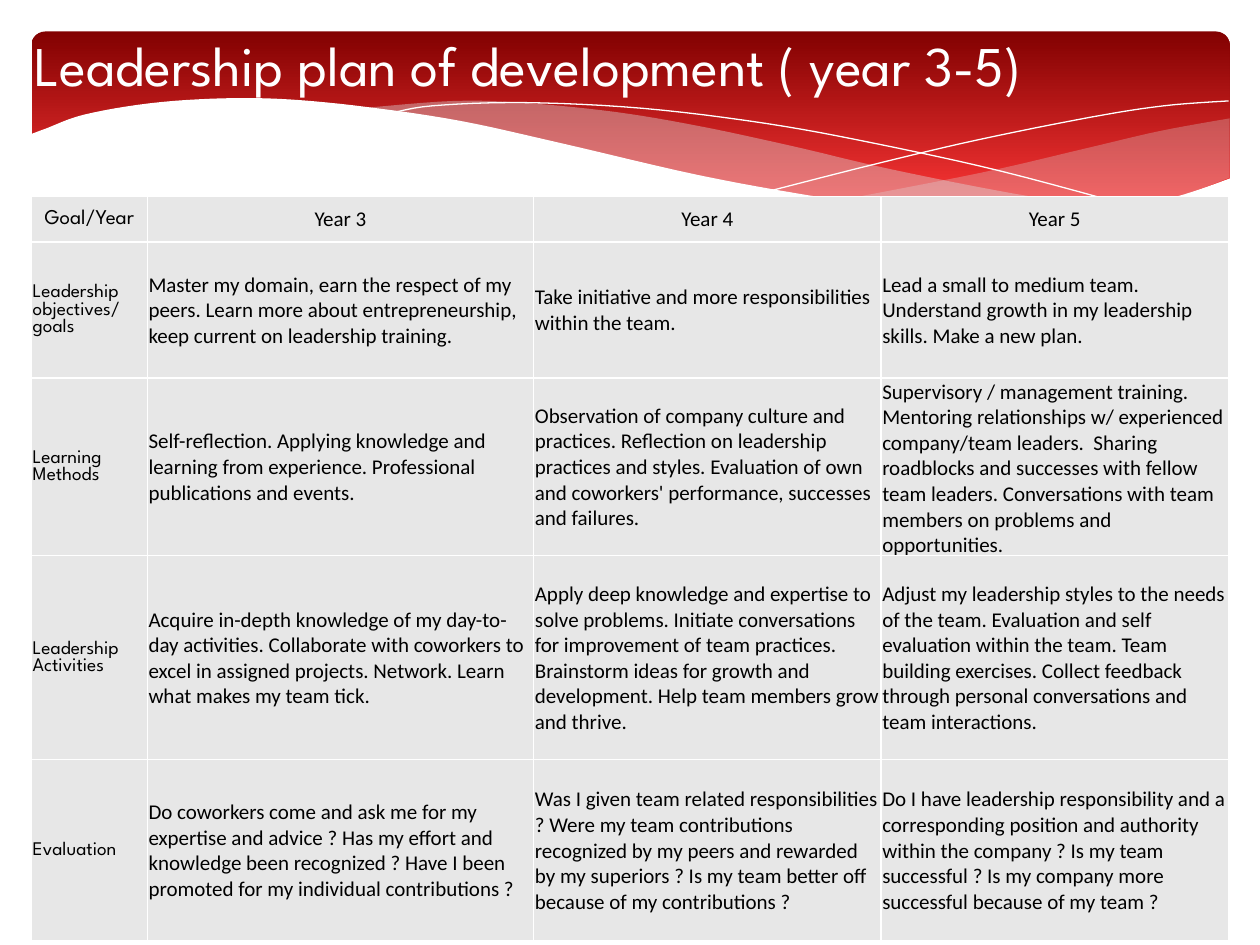
from lxml import etree
from pptx import Presentation
from pptx.dml.color import RGBColor
from pptx.enum.shapes import MSO_SHAPE
from pptx.enum.text import MSO_ANCHOR, MSO_AUTO_SIZE, PP_ALIGN
from pptx.oxml.ns import qn
from pptx.util import Inches, Pt

ROUND = MSO_SHAPE.ROUNDED_RECTANGLE
MIDDLE = MSO_ANCHOR.MIDDLE
GROW = MSO_AUTO_SIZE.SHAPE_TO_FIT_TEXT
LEFT, CENTER = PP_ALIGN.LEFT, PP_ALIGN.CENTER

WHITE = RGBColor(0xFF, 0xFF, 0xFF)
BLACK = RGBColor(0, 0, 0)
DARK = RGBColor(0x82, 0x01, 0x01)
RED = RGBColor(0xFE, 0x37, 0x37)
MIST = RGBColor(0xDE, 0xDE, 0xE0)
GREY = RGBColor(0xE7, 0xE7, 0xE7)
HEAD, BODY = "League Spartan", "Calibri"

# Curves of the band, as percent of its width and height
RIGHT = [
    [(100, 44.2), (94.2, 50.6), (87.9, 59.6), (79.3, 71.8), (66.9, 86.5)],
    [(66.9, 86.5), (73, 91), (79.5, 94.2), (86.1, 93.6), (91.7, 89.7),
     (95.7, 84), (100, 74.4)],
]
MID = [
    [(91.3, 91), (82.2, 82.7), (71.6, 69.9), (63.5, 58.3), (55.7, 48.1),
     (48.8, 41), (41.5, 36.5), (35.3, 35.3), (27.4, 39.1)],
    [(27.4, 39.1), (33.3, 44.2), (39.9, 51.9), (49, 64.7), (56.9, 75.6),
     (65.7, 85.3), (73.3, 91.7), (81.1, 94.9), (86.5, 94.2), (91.3, 91)],
]
FALL = [[(29.9, 41.7), (33.5, 37.8), (41.1, 36.2), (51, 39.1), (61.3, 46.8),
         (70.5, 57.1), (81, 71.2), (92.7, 90.4)]]
RISE = [[(61.8, 80.8), (70.5, 67.3), (79, 55.1), (88.4, 43.6), (94.5, 37.8),
         (99.9, 35.3)]]
FRONT = [
    [(100.2, 74.4), (95.2, 84.6), (89.4, 91), (82.4, 93.6), (73.7, 91),
     (65.5, 84), (55.7, 73.1), (44.4, 57.1), (35.8, 45.5), (28.1, 38.5),
     (21.6, 34.6), (16, 34), (9.9, 36.5), (4.4, 42.3), (1.2, 49.4),
     (-0.2, 52.6)],
    [(-0.2, 127.6)], [(100.2, 127.6)],
]

COLS = [0.92, 3.07, 2.76, 2.76]
ROWS = [0.36, 1.08, 1.26, 1.62, 1.44]
PLAN = [
    ["Goal/Year", "Year 3", "Year 4", "Year 5"],
    ["Leadership objectives/ goals",
     "Master my domain, earn the respect of my peers. Learn more about "
     "entrepreneurship, keep current on leadership training.",
     "Take initiative and more responsibilities within the team.",
     "Lead a small to medium team. Understand growth in my leadership "
     "skills. Make a new plan."],
    ["Learning Methods",
     "Self-reflection. Applying knowledge and learning from experience. "
     "Professional publications and events.",
     "Observation of company culture and practices. Reflection on "
     "leadership practices and styles. Evaluation of own and coworkers' "
     "performance, successes and failures.",
     "Supervisory / management training. Mentoring relationships w/ "
     "experienced company/team leaders.  Sharing roadblocks and successes "
     "with fellow team leaders. Conversations with team members on problems "
     "and opportunities."],
    ["Leadership Activities",
     "Acquire in-depth knowledge of my day-to-day activities. Collaborate "
     "with coworkers to excel in assigned projects. Network. Learn what "
     "makes my team tick.",
     "Apply deep knowledge and expertise to solve problems. Initiate "
     "conversations for improvement of team practices. Brainstorm ideas for "
     "growth and development. Help team members grow and thrive.",
     "Adjust my leadership styles to the needs of the team. Evaluation and "
     "self evaluation within the team. Team building exercises. Collect "
     "feedback through personal conversations and team interactions."],
    ["Evaluation",
     "Do coworkers come and ask me for my expertise and advice ? Has my "
     "effort and knowledge been recognized ? Have I been promoted for my "
     "individual contributions ?",
     "Was I given team related responsibilities ? Were my team "
     "contributions  recognized by my peers and rewarded by my superiors ? "
     "Is my team better off because of my contributions ?",
     "Do I have leadership responsibility and a corresponding position and "
     "authority within the company ? Is my team successful ? Is my company "
     "more successful because of my team ?"],
]


def write(frame, text, size=12, font=BODY, color=BLACK, align=LEFT):
    para = frame.paragraphs[0]
    para.alignment = align
    run = para.add_run()
    run.text = text
    run.font.size, run.font.name, run.font.bold = Pt(size), font, False
    run.font.color.rgb = color


def smooth(knots, steps=6):
    """Points of a Catmull-Rom curve through the knots."""
    pts = [knots[0]]
    ends = [knots[0], *knots, knots[-1]]
    for a, b, c, d in zip(ends, ends[1:], ends[2:], ends[3:]):
        for t in (i / steps for i in range(1, steps + 1)):
            pts.append(tuple(
                q + t / 2 * (r - p + t * (2 * p - 5 * q + 4 * r - s
                                          + t * (3 * (q - r) + s - p)))
                for p, q, r, s in zip(a, b, c, d)))
    return pts


def wave(slide, box, curves, fill=None, alpha=100):
    """A filled wave, or a white hairline when there is no fill."""
    x, y, w, h = box
    pts = [(Inches(x + w * px / 100), Inches(y + h * py / 100))
           for curve in curves for px, py in smooth(curve)]
    pen = slide.shapes.build_freeform(*pts[0])
    pen.add_line_segments(pts[1:], close=fill is not None)
    shape = pen.convert_to_shape()
    shape.shadow.inherit = False
    if fill is None:
        shape.fill.background()
        shape.line.color.rgb = WHITE
        shape.line.width = Pt(0)
        return
    shape.line.fill.background()
    shape.fill.solid()
    shape.fill.fore_color.rgb = fill
    if alpha < 100:
        tint = shape.element.spPr.find(qn("a:solidFill"))[0]
        etree.SubElement(tint, qn("a:alpha"), val=str(alpha * 1000))


def band(slide, box):
    back = slide.shapes.add_shape(ROUND, *map(Inches, box))
    back.adjustments[0] = 0.07
    back.shadow.inherit = False
    back.line.fill.background()
    back.fill.gradient()
    back.fill.gradient_angle = 270
    for stop, color, place in zip(back.fill.gradient_stops, (DARK, RED),
                                  (0, 0.9)):
        stop.color.rgb, stop.position = color, place
    wave(slide, box, RIGHT, MIST, 29)
    wave(slide, box, MID, MIST, 40)
    wave(slide, box, FALL)
    wave(slide, box, RISE)
    wave(slide, box, FRONT, WHITE)


def title(slide, box, text):
    head = slide.shapes.title
    head.left, head.top, head.width, head.height = map(Inches, box)
    frame = head.text_frame
    frame.word_wrap, frame.auto_size = False, GROW
    frame.vertical_anchor = MIDDLE
    write(frame, text, size=32, font=HEAD, color=WHITE)
    head.element.getparent().append(head.element)  # in front of the band


def edge(cell):
    """White one-point borders on all four sides."""
    props = cell._tc.get_or_add_tcPr()
    for i, side in enumerate(("lnL", "lnR", "lnT", "lnB")):
        line = etree.Element(qn("a:" + side), w=str(Pt(1)))
        fill = etree.SubElement(line, qn("a:solidFill"))
        etree.SubElement(fill, qn("a:srgbClr"), val=str(WHITE))
        props.insert(i, line)


def grid(slide, box):
    table = slide.shapes.add_table(len(ROWS), len(COLS),
                                   *map(Inches, box)).table
    table.first_row = table.horz_banding = False
    for col, share in zip(table.columns, COLS):
        col.width = Inches(box[2] * share / sum(COLS))
    for row, share in zip(table.rows, ROWS):
        row.height = Inches(box[3] * share / sum(ROWS))
    for r, line in enumerate(PLAN):
        for c, text in enumerate(line):
            cell = table.cell(r, c)
            cell.fill.solid()
            cell.fill.fore_color.rgb = GREY
            edge(cell)
            cell.vertical_anchor = MIDDLE
            cell.margin_left = cell.margin_right = Inches(0.01)
            cell.margin_top, cell.margin_bottom = Inches(0.01), 0
            write(cell.text_frame, text, size=11 if r and not c else 12,
                  font=BODY if c else HEAD, align=LEFT if r else CENTER)


def main():
    deck = Presentation()
    deck.slide_width, deck.slide_height = Inches(10), Inches(7.5)
    slide = deck.slides.add_slide(deck.slide_layouts[5])
    band(slide, (0.25, 0.25, 9.51, 1.56))
    title(slide, (0.17, 0.19, 9.66, 0.64),
          "Leadership plan of development ( year 3-5)")
    grid(slide, (0.25, 1.56, 9.5, sum(ROWS)))
    deck.save("out.pptx")


if __name__ == "__main__":
    main()
